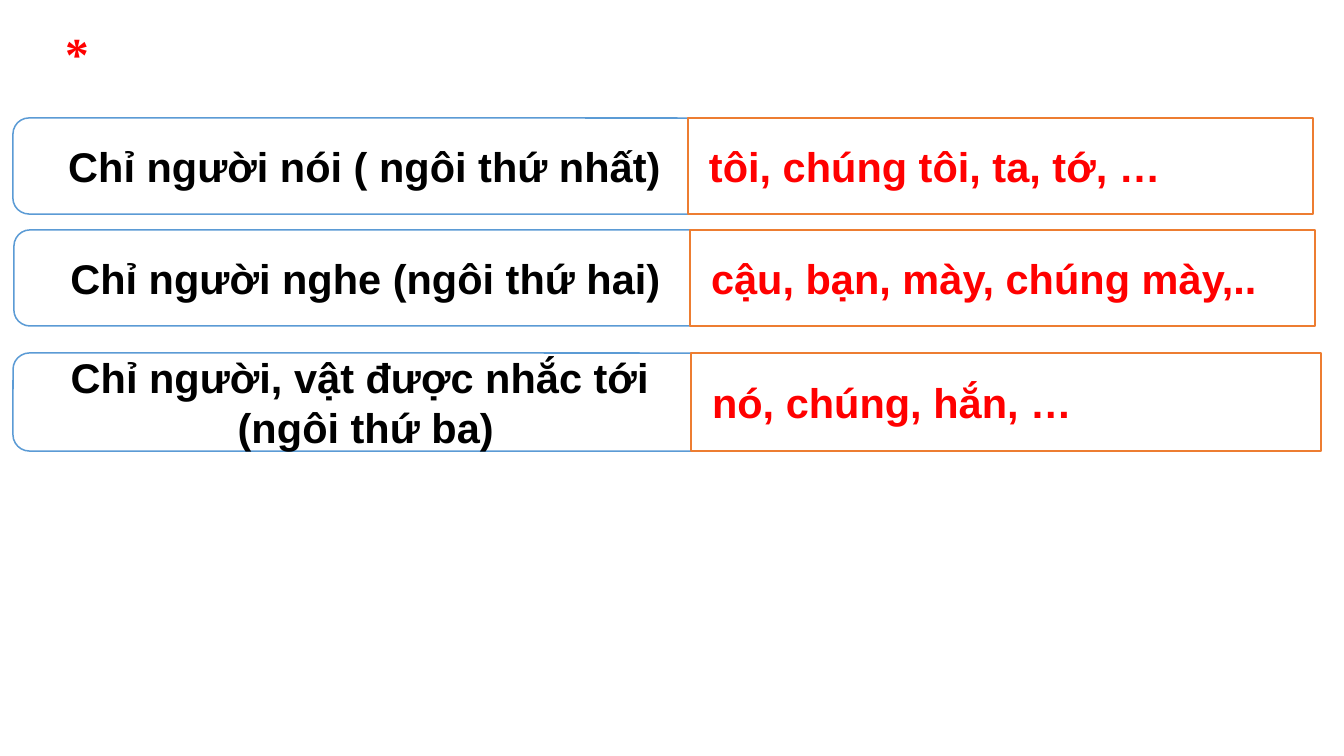
import pptx
import pptx.util
import pptx.dml.color
import pptx.enum.shapes
import pptx.enum.text
from dataclasses import dataclass

PX = 4286  # EMU in one px
SHAPE = pptx.enum.shapes.MSO_SHAPE
ALIGN = pptx.enum.text.PP_ALIGN
ANCHOR = pptx.enum.text.MSO_ANCHOR


@dataclass(frozen=True)
class Theme:
    white: str = "FFFFFF"
    black: str = "000000"
    red: str = "FF0000"
    blue: str = "5B9BD5"
    orange: str = "ED7D31"
    sans: str = "Arial"
    serif: str = "Times New Roman"
    body: int = 14
    star: int = 16
    line: float = 0.5


THEME = Theme()

# Row box (left, top, width, height), width of label, left of answer, texts
ROWS = [
    ((13, 118, 1300, 96), 704, 688,
     ["Chỉ người nói ( ngôi thứ nhất)"], "tôi, chúng tôi, ta, tớ, …"),
    ((14, 230, 1301, 96), 704, 690,
     ["Chỉ người nghe (ngôi thứ hai)"], "cậu, bạn, mày, chúng mày,.."),
    ((13, 353, 1308, 98), 706, 691,
     ["Chỉ người, vật được nhắc tới ", "(ngôi thứ ba)"], "nó, chúng, hắn, …"),
]


def scale(*sizes):
    return [pptx.util.Emu(size * PX) for size in sizes]


def color(code):
    return pptx.dml.color.RGBColor.from_string(code)


def write(frame, lines, face, size, ink, align):
    for i, line in enumerate(lines):
        para = frame.add_paragraph() if i else frame.paragraphs[0]
        para.alignment = align
        run = para.add_run()
        run.text = line
        run.font.name = face
        run.font.size = pptx.util.Pt(size)
        run.font.bold = True
        run.font.color.rgb = color(ink)


def panel(group, kind, box, edge, lines, ink, align):
    shape = group.shapes.add_shape(kind, *scale(*box))
    shape.shadow.inherit = False
    shape.fill.solid()
    shape.fill.fore_color.rgb = color(THEME.white)
    shape.line.color.rgb = color(edge)
    shape.line.width = pptx.util.Pt(THEME.line)
    frame = shape.text_frame
    frame.word_wrap = True
    frame.vertical_anchor = ANCHOR.MIDDLE
    write(frame, lines, THEME.sans, THEME.body, ink, align)


def star(slide, box):
    frame = slide.shapes.add_textbox(*scale(*box)).text_frame
    frame.word_wrap = False
    frame.auto_size = pptx.enum.text.MSO_AUTO_SIZE.SHAPE_TO_FIT_TEXT
    frame.margin_left, frame.margin_top = scale(13, 6)
    frame.margin_right, frame.margin_bottom = scale(13, 6)
    write(frame, ["*"], THEME.serif, THEME.star, THEME.red, ALIGN.LEFT)


def row(slide, box, wide, split, label, answer):
    left, top, width, height = box
    group = slide.shapes.add_group_shape()
    # Label on the left, overlapped by the answer on the right
    panel(group, SHAPE.ROUNDED_RECTANGLE, (left, top, wide, height),
          THEME.blue, label, THEME.black, ALIGN.CENTER)
    panel(group, SHAPE.RECTANGLE, (split, top, left + width - split, height),
          THEME.orange, [answer], THEME.red, ALIGN.LEFT)


def main():
    deck = pptx.Presentation()
    deck.slide_width, deck.slide_height = scale(1344, 756)
    slide = deck.slides.add_slide(deck.slide_layouts[6])
    # Star at the top
    star(slide, (52, 18, 72, 70))
    # Pronoun rows
    for item in ROWS:
        row(slide, *item)
    deck.save("out.pptx")


if __name__ == "__main__":
    main()
